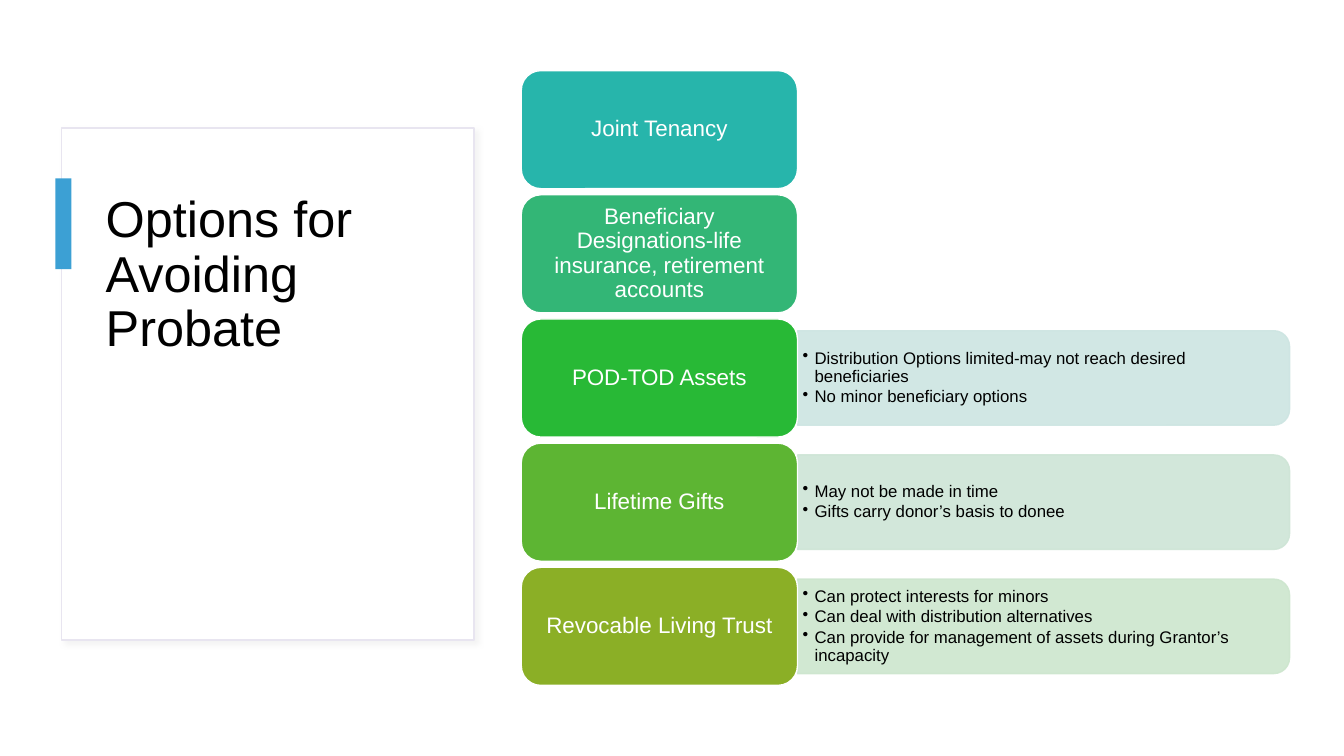
from lxml import etree
from pptx import Presentation
from pptx.dml.color import RGBColor
from pptx.enum.shapes import MSO_SHAPE
from pptx.enum.text import MSO_ANCHOR, PP_ALIGN
from pptx.oxml import parse_xml
from pptx.oxml.ns import qn
from pptx.util import Inches, Pt

RECT = MSO_SHAPE.RECTANGLE
ROUND = MSO_SHAPE.ROUNDED_RECTANGLE
TAB = MSO_SHAPE.ROUND_2_SAME_RECTANGLE
MIDDLE, TOP = MSO_ANCHOR.MIDDLE, MSO_ANCHOR.TOP
CENTER, LEFT = PP_ALIGN.CENTER, PP_ALIGN.LEFT
NS = "http://schemas.openxmlformats.org/drawingml/2006/main"
SHADOW = (
    f'<a:effectLst xmlns:a="{NS}"><a:outerShdw blurRad="50800" dist="38100" '
    'dir="2700000" algn="tl" rotWithShape="0"><a:srgbClr val="D9D9D9">'
    '<a:alpha val="30000"/></a:srgbClr></a:outerShdw></a:effectLst>'
)
ROWS = [
    ("Joint Tenancy", "27B5AB", None, []),
    ("Beneficiary Designations-life insurance, retirement accounts",
     "33B676", None, []),
    ("POD-TOD Assets", "28B936", "CDE5E2", [
        "Distribution Options limited-may not reach desired beneficiaries",
        "No minor beneficiary options"]),
    ("Lifetime Gifts", "5DB533", "CEE5D6", [
        "May not be made in time",
        "Gifts carry donor’s basis to donee"]),
    ("Revocable Living Trust", "8BAF26", "CDE6CE", [
        "Can protect interests for minors",
        "Can deal with distribution alternatives",
        "Can provide for management of assets during Grantor’s incapacity"]),
]


def color(code):
    """Turn a hex string into a colour."""
    return RGBColor.from_string(code)


def assign(item, values):
    """Set each attribute named in a dict."""
    for name, value in values.items():
        setattr(item, name, value)


def block(slide, kind, box, fill, edge=None):
    """Add a filled shape without a shadow."""
    shape = slide.shapes.add_shape(kind, *map(Inches, box))
    shape.shadow.inherit = False
    shape.fill.solid()
    shape.fill.fore_color.rgb = color(fill)
    if edge:
        shape.line.color.rgb = color(edge)
        shape.line.width = Pt(1)
    else:
        shape.line.fill.background()
    return shape


def write(shape, lines, size, ink, inset, anchor=MIDDLE, align=LEFT, bullet=False):
    """Fill a shape with paragraphs of text."""
    frame = shape.text_frame
    side, edge = map(Inches, inset)
    assign(frame, dict(word_wrap=True, vertical_anchor=anchor,
                       margin_left=side, margin_right=side,
                       margin_top=edge, margin_bottom=edge))
    for index, line in enumerate(lines):
        para = frame.add_paragraph() if index else frame.paragraphs[0]
        assign(para, dict(alignment=align, line_spacing=0.9))
        run = para.add_run()
        run.text = line
        assign(run.font, dict(size=Pt(size), name="Arial"))
        run.font.color.rgb = color(ink)
        if bullet:
            para.space_after = Pt(1.8)
            props = para._p.get_or_add_pPr()
            props.set("marL", str(Inches(0.12)))
            props.set("indent", str(-Inches(0.12)))
            etree.SubElement(props, qn("a:buChar")).set("char", "•")


def heading(slide, left, top, width, height):
    """Draw the framed title card with its accent bar."""
    card = block(slide, RECT, (left, top, width, height), "FFFFFF", "E8E5F0")
    props = card._element.spPr
    props.replace(props.find(qn("a:effectLst")), parse_xml(SHADOW))
    box = left + 0.34, top + 0.61, width - 0.7, height - 1.23
    title = slide.shapes.add_textbox(*map(Inches, box))
    write(title, ["Options for Avoiding Probate"], 36, "000000", (0.1, 0.05), TOP)
    block(slide, RECT, (left - 0.06, top + 0.5, 0.16, 0.9), "3CA0D4")


def panel(slide, left, top, width, height, tint, lines):
    """Draw a pale panel, rounded on the right, with bullets."""
    box = (left + (width - height) / 2, top + (height - width) / 2, height, width)
    shape = block(slide, TAB, box, tint, tint)
    shape.rotation = 90
    for code in shape._element.spPr.iter(qn("a:srgbClr")):
        etree.SubElement(code, qn("a:alpha")).set("val", "90000")
    area = left, top + 0.05, width - 0.05, height - 0.1
    text = slide.shapes.add_textbox(*map(Inches, area))
    write(text, lines, 12, "000000", (0.05, 0.03), bullet=True)


def options(slide, left, top, width, height):
    """Stack the option rows, each a label and perhaps a panel."""
    gap, label = 0.06, 2.74
    tall = (height - gap * (len(ROWS) - 1)) / len(ROWS)
    for index, (name, fill, tint, lines) in enumerate(ROWS):
        y = top + index * (tall + gap)
        if lines:
            panel(slide, left + label, y + tall * 0.1, width - label,
                  tall * 0.8, tint, lines)
        shape = block(slide, ROUND, (left, y, label, tall), fill, "FFFFFF")
        write(shape, [name], 16, "FFFFFF", (0.13, 0.09), align=CENTER)


def main():
    """Build and save the slide."""
    deck = Presentation()
    assign(deck, dict(slide_width=Inches(13.33), slide_height=Inches(7.5)))
    slide = deck.slides.add_slide(deck.slide_layouts[6])
    heading(slide, 0.61, 1.27, 4.09, 5.08)
    options(slide, 5.17, 0.7, 7.62, 6.1)
    deck.save("out.pptx")


if __name__ == "__main__":
    main()
